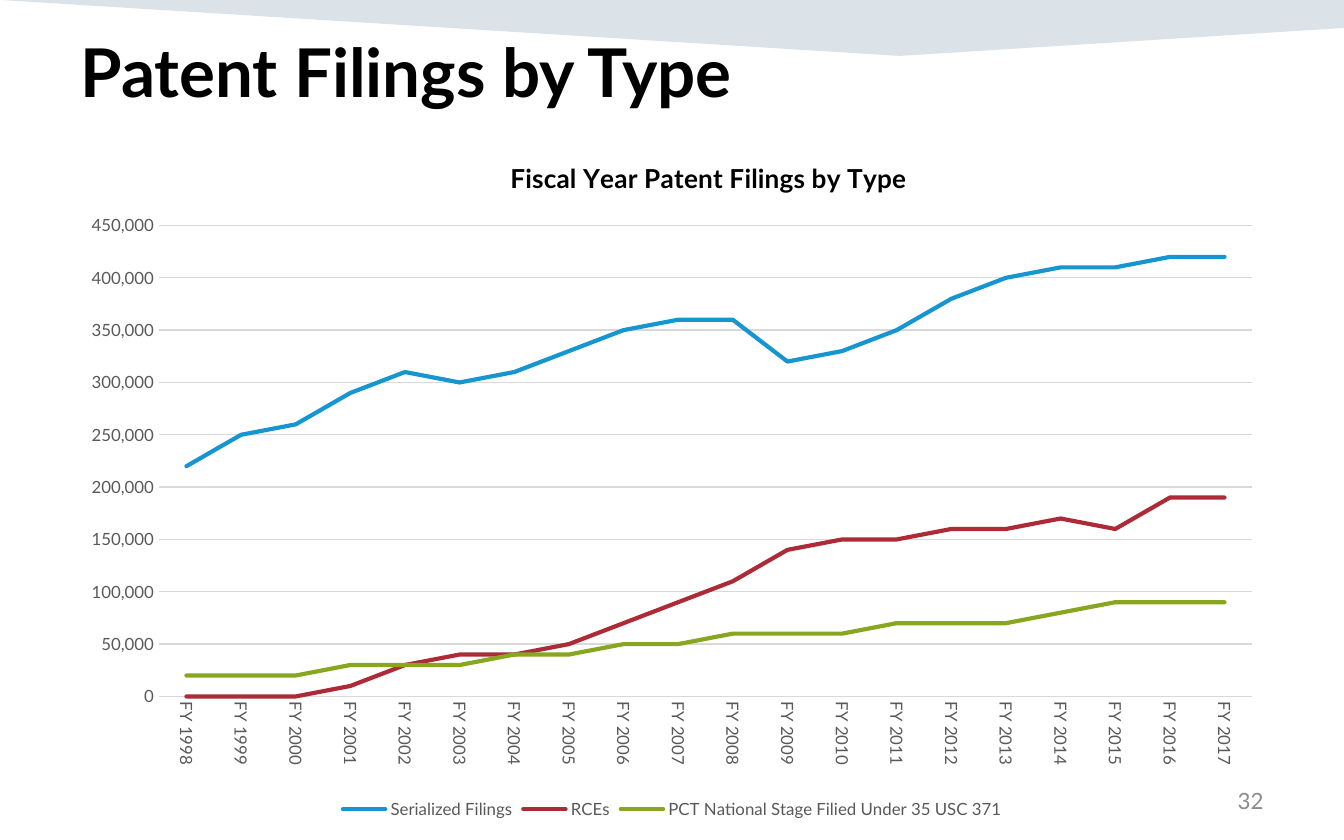
from lxml.etree import SubElement
from pptx import Presentation
from pptx.chart.data import CategoryChartData
from pptx.dml.color import RGBColor
from pptx.enum.chart import XL_CHART_TYPE, XL_LEGEND_POSITION, XL_TICK_MARK
from pptx.enum.text import MSO_ANCHOR, PP_ALIGN
from pptx.oxml import parse_xml
from pptx.oxml.ns import nsdecls, qn
from pptx.util import Pt

BLACK = RGBColor(0x00, 0x00, 0x00)
NAVY = RGBColor(0x16, 0x44, 0x69)
NUMBER_GRAY = RGBColor(0x8C, 0x8C, 0x8C)
LABEL_GRAY = RGBColor(0x59, 0x59, 0x59)
GRID_GRAY = RGBColor(0xD9, 0xD9, 0xD9)
BLUE = RGBColor(0x15, 0x96, 0xD1)
RED = RGBColor(0xAC, 0x2B, 0x37)
GREEN = RGBColor(0x88, 0xA6, 0x20)

YEARS = [f"FY {year}" for year in range(1998, 2018)]
FILINGS = [
    ("Serialized Filings", BLUE, [
        220000, 250000, 260000, 290000, 310000, 300000, 310000, 330000, 350000, 360000,
        360000, 320000, 330000, 350000, 380000, 400000, 410000, 410000, 420000, 420000]),
    ("RCEs", RED, [
        0, 0, 0, 10000, 30000, 40000, 40000, 50000, 70000, 90000,
        110000, 140000, 150000, 150000, 160000, 160000, 170000, 160000, 190000, 190000]),
    ("PCT National Stage Filied Under 35 USC 371", GREEN, [
        20000, 20000, 20000, 30000, 30000, 30000, 40000, 40000, 50000, 50000,
        60000, 60000, 60000, 70000, 70000, 70000, 80000, 90000, 90000, 90000]),
]


class SlideBuilder:
    font_name = "Lato"

    def __init__(self, slide):
        self.s = slide

    def style(self, font, size, color, bold=False):
        font.name = self.font_name
        font.size = Pt(size)
        font.bold = bold
        font.color.rgb = color

    def place(self, sp, left, top, width, height):
        sp.left, sp.top, sp.width, sp.height = Pt(left), Pt(top), Pt(width), Pt(height)

    def run(self, p, text, size, color, bold=False, align=PP_ALIGN.LEFT):
        p.alignment = align
        r = p.add_run()
        r.text = text
        self.style(r.font, size, color, bold)

    def band(self, points, color, opacity):
        builder = self.s.shapes.build_freeform(*points[0], scale=Pt(1))
        builder.add_line_segments(points[1:], close=True)
        sp = builder.convert_to_shape()
        sp.shadow.inherit = False
        sp.line.fill.background()
        sp.fill.solid()
        sp.fill.fore_color.rgb = color
        rgb = sp.fill._xPr.find(".//" + qn("a:srgbClr"))
        SubElement(rgb, qn("a:alpha"), val=str(opacity * 1000))
        self.s.shapes._spTree.insert(2, sp._element)

    def title(self, text, box):
        sp = self.s.shapes.title
        self.place(sp, *box)
        tf = sp.text_frame
        tf.word_wrap = True
        tf.vertical_anchor = MSO_ANCHOR.TOP
        self.run(tf.paragraphs[0], text, 36, BLACK, bold=True)

    def number(self, text, box):
        tf = self.s.shapes.add_textbox(*map(Pt, box)).text_frame
        tf.word_wrap = True
        tf.vertical_anchor = MSO_ANCHOR.MIDDLE
        self.run(tf.paragraphs[0], text, 12, NUMBER_GRAY, align=PP_ALIGN.RIGHT)

    def layout(self, parent, percents, inner=False):
        for old in parent.findall(qn("c:layout")):
            parent.remove(old)
        target = '<c:layoutTarget val="inner"/>' if inner else ""
        modes = "".join(f'<c:{k}Mode val="edge"/>' for k in "xy")
        sizes = "".join(f'<c:{k} val="{v / 100:.4f}"/>' for k, v in zip("xywh", percents))
        layout = parse_xml(f'<c:layout {nsdecls("c")}><c:manualLayout>'
                           f'{target}{modes}{sizes}</c:manualLayout></c:layout>')
        parent.insert(0 if inner else 1, layout)

    def axis(self, axis):
        axis.major_tick_mark = axis.minor_tick_mark = XL_TICK_MARK.NONE
        self.style(axis.tick_labels.font, 9, LABEL_GRAY)

    def grid_line(self, line):
        line.color.rgb = GRID_GRAY
        line.width = Pt(0.75)

    def line_chart(self, title, categories, series, box):
        data = CategoryChartData(number_format="#,##0")
        data.categories = categories
        for name, _, values in series:
            data.add_series(name, values)
        chart = self.s.shapes.add_chart(XL_CHART_TYPE.LINE, *map(Pt, box), data).chart
        self.style(chart.font, 10, BLACK)

        chart.has_title = True
        p = chart.chart_title.text_frame.paragraphs[0]
        self.run(p, title, 14, BLACK, bold=True, align=PP_ALIGN.CENTER)
        chart.chart_title.include_in_layout = False
        self.layout(chart.chart_title._element, (36.25, 2.8))

        chart.has_legend = True
        chart.legend.position = XL_LEGEND_POSITION.BOTTOM
        chart.legend.include_in_layout = False
        self.style(chart.legend.font, 9, LABEL_GRAY)

        years, counts = chart.category_axis, chart.value_axis
        self.axis(years)
        self.grid_line(years.format.line)
        years._element.find(qn("c:txPr")).find(qn("a:bodyPr")).set("rot", "5400000")
        self.axis(counts)
        counts.format.line.fill.background()
        counts.minimum_scale, counts.maximum_scale, counts.major_unit = 0, 450000, 50000
        counts.has_major_gridlines = True
        self.grid_line(counts.major_gridlines.format.line)
        counts.tick_labels.number_format = "#,##0"
        counts.tick_labels.number_format_is_linked = False

        plot = chart.plots[0]
        plot.vary_by_categories = False
        for line, (_, color, _) in zip(plot.series, series):
            line.smooth = False
            line.format.line.color.rgb = color
            line.format.line.width = Pt(2.25)
            line._element.find(".//" + qn("a:ln")).set("cap", "rnd")
        self.layout(plot._element.getparent(), (7.6, 13.2, 90.35, 68.2), inner=True)


def main():
    prs = Presentation()
    prs.slide_width, prs.slide_height = Pt(720), Pt(450)
    b = SlideBuilder(prs.slides.add_slide(prs.slide_layouts[5]))
    b.band([(0, 0), (720, 0), (720, 15), (481.7, 29.5)], NAVY, 15)
    b.title("Patent Filings by Type", (36, 12.7, 648, 70))
    b.number("32", (516, 417, 168, 24))
    b.line_chart("Fiscal Year Patent Filings by Type", YEARS, FILINGS, (36, 72, 648, 370))
    prs.save("out.pptx")


if __name__ == "__main__":
    main()
